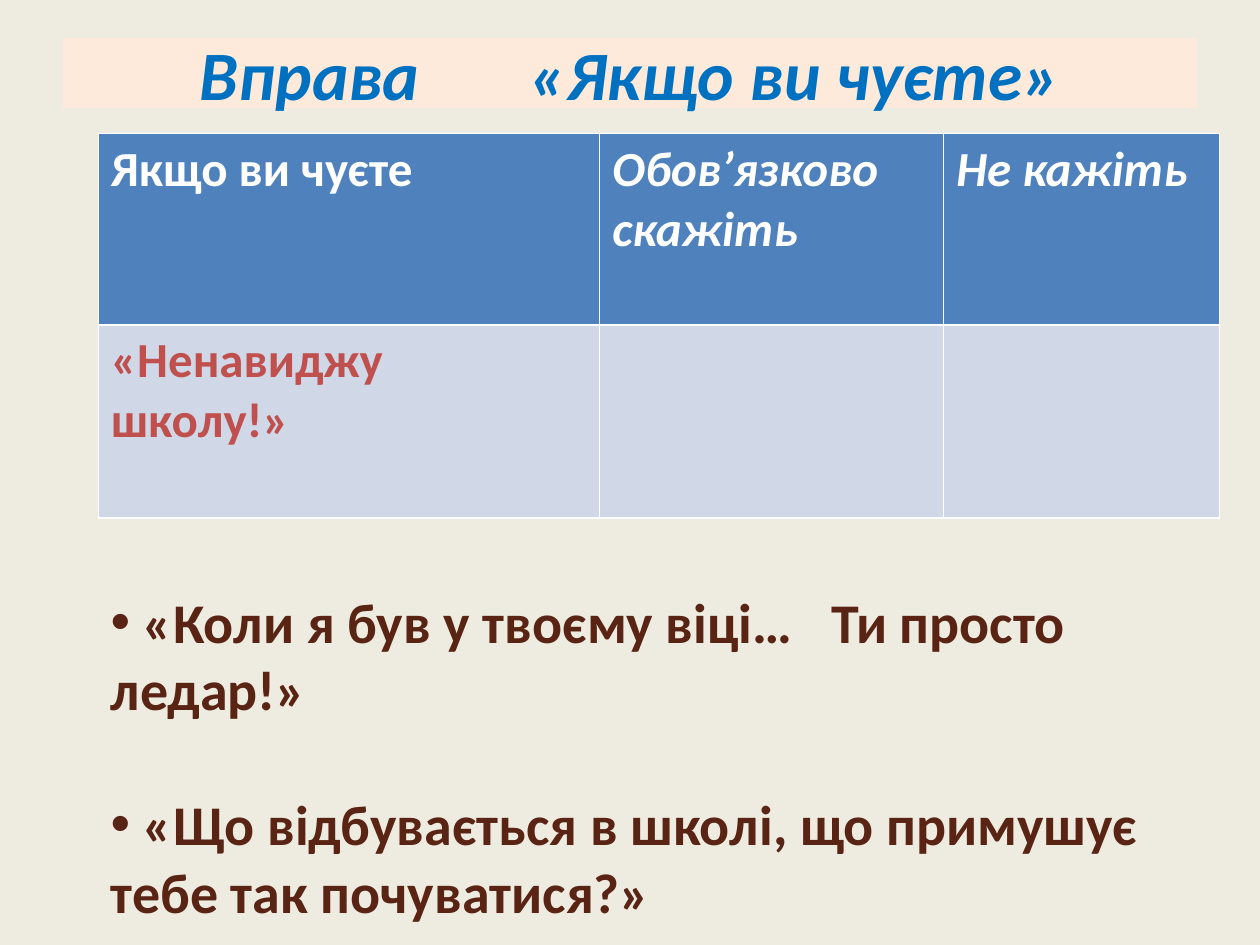
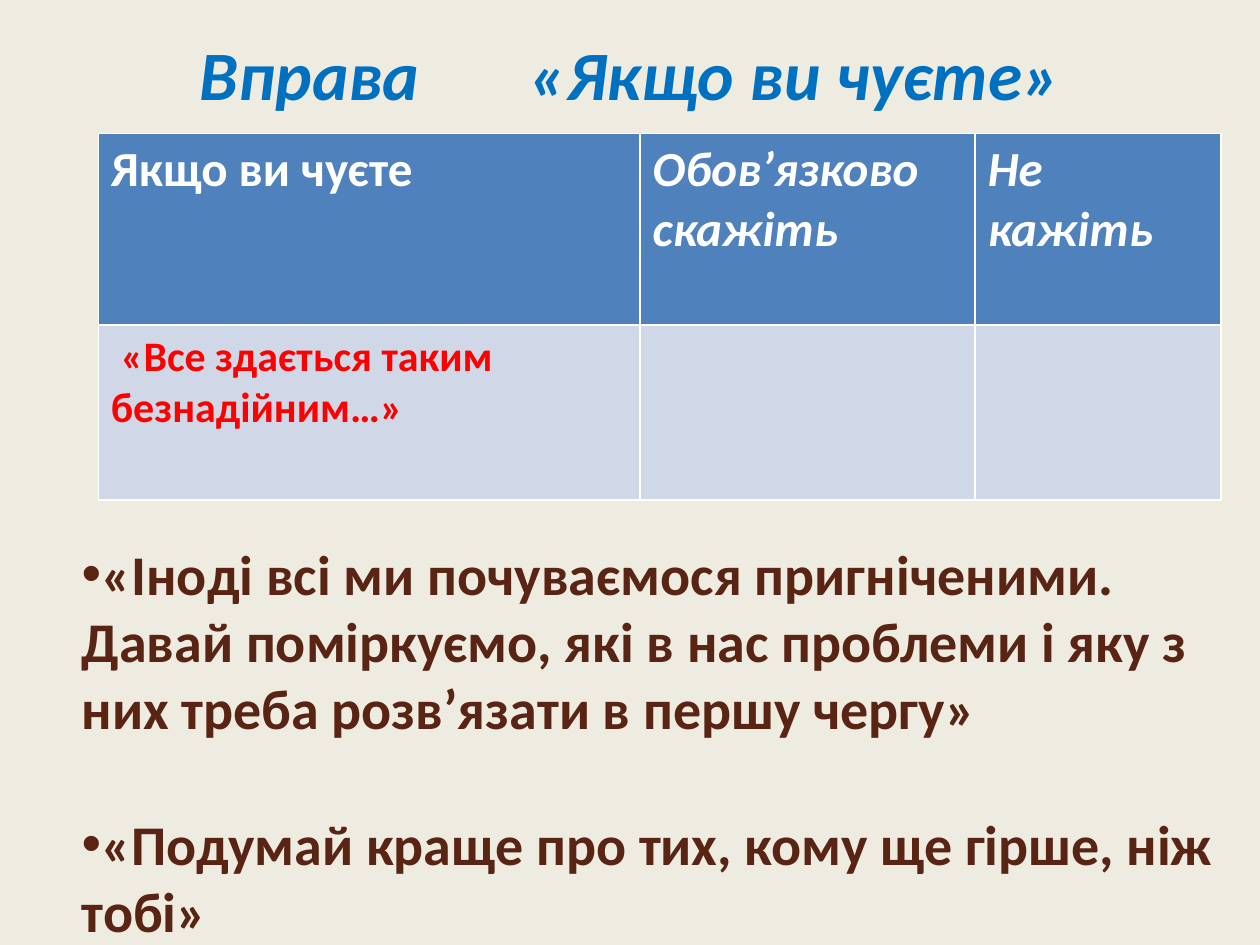
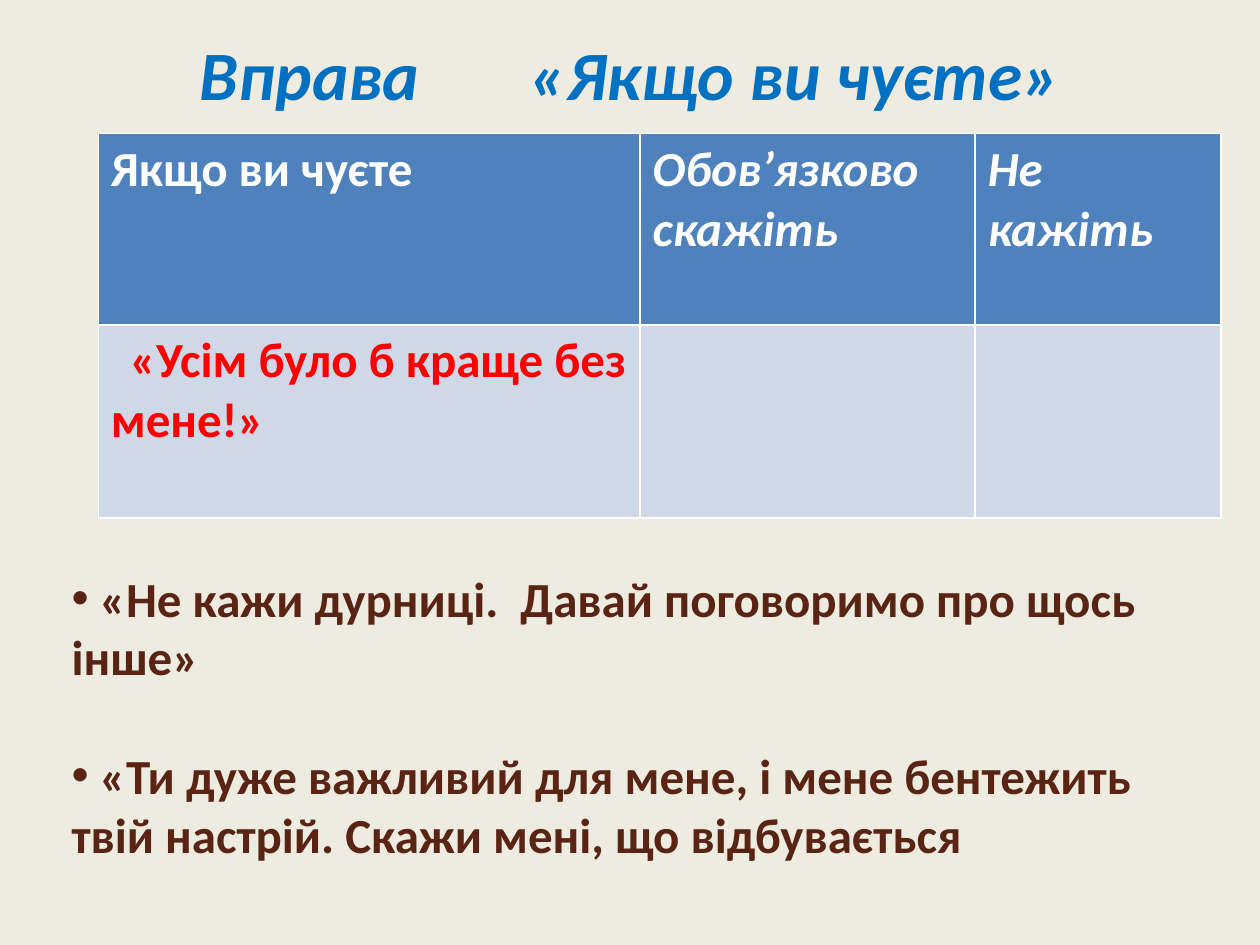
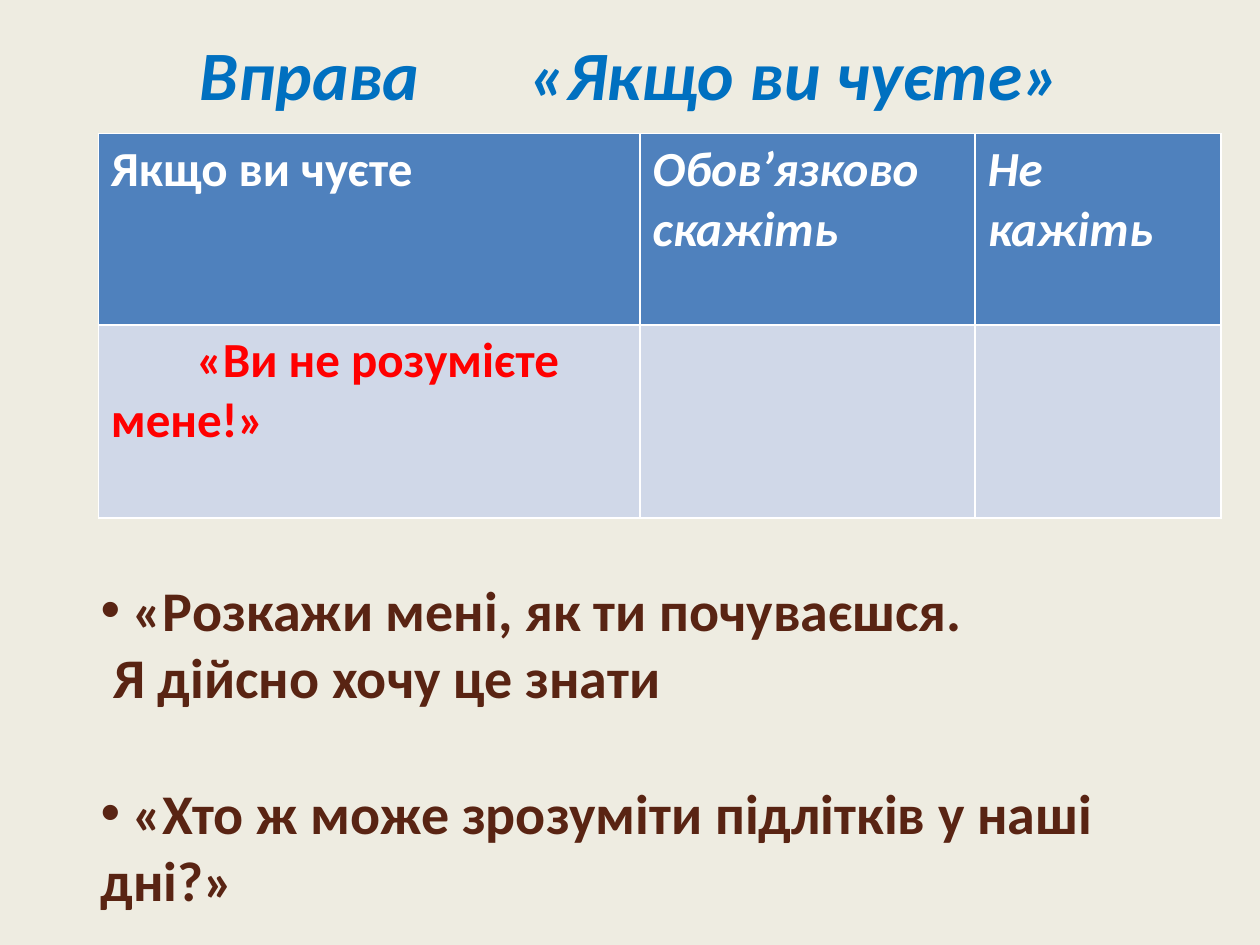
from dataclasses import dataclass

from lxml.etree import SubElement
from pptx import Presentation
from pptx.dml.color import RGBColor
from pptx.enum.text import MSO_ANCHOR, MSO_AUTO_SIZE, PP_ALIGN
from pptx.oxml.ns import qn
from pptx.util import Inches, Pt

COLORS = {
    "page": "EEECE1", "band": "FDEADA", "title": "0070C0",
    "head": "4F81BD", "body": "D0D8E8", "white": "FFFFFF",
    "rose": "C0504D", "red": "FF0000", "brown": "592413",
}
FONT = "Calibri"
LINE = 1.22  # line height of the font, in text sizes
TITLE = "Вправа|«Якщо ви чуєте»"
HEADS = ("Якщо ви чуєте", "Обов’язково скажіть", "Не кажіть")
WIDE = (3.98, 2.73, 2.19)
EVEN = (4.3, 2.66, 1.95)
HEAD_H = 1.52


@dataclass
class Look:
    size: float
    color: str
    italic: bool = False


@dataclass
class Quote:
    """The phrase in the first cell of the table."""
    text: str
    color: str = "red"
    size: float = 28
    indent: float = 0
    right: float = 0.1


@dataclass
class Reply:
    """One paragraph below the table; "|" marks a wide gap."""
    text: str
    gap: float = 0
    bullet: bool = True
    indent: float = 0


@dataclass
class Page:
    cols: tuple[float, ...]
    row: float
    quote: Quote
    box: tuple[float, float, float, float]
    replies: tuple[Reply, ...]
    size: float = 32
    anchor: MSO_ANCHOR = MSO_ANCHOR.MIDDLE
    band: bool = False


PAGES = (
    Page(WIDE, 1.53, Quote("«Ненавиджу школу!»", "rose", right=0.4),
         (0.78, 4.61, 8.67, 2.79),
         (Reply(" «Коли я був у твоєму віці…|Ти просто ледар!»", 14.5),
          Reply(" «Що відбувається в школі, що примушує тебе так почуватися?»")),
         anchor=MSO_ANCHOR.TOP, band=True),
    Page(EVEN, 1.39, Quote("«Все здається таким безнадійним…»", size=24, indent=0.08),
         (0.55, 4.22, 9.22, 3.33),
         (Reply("«Іноді всі ми почуваємося пригніченими. Давай поміркуємо, "
                "які в нас проблеми і яку з них треба розв’язати в першу чергу»"),
          Reply("«Подумай краще про тих, кому ще гірше, ніж тобі»"))),
    Page(EVEN, 1.53, Quote("«Усім було б краще без мене!»", indent=0.15),
         (0.47, 4.45, 8.75, 2.46),
         (Reply(" «Не кажи дурниці.|Давай поговоримо про щось інше»", 6.3),
          Reply(" «Ти дуже важливий для мене, і мене бентежить твій настрій. "
                "Скажи мені, що відбувається")),
         size=28),
    Page(EVEN, 1.53, Quote("«Ви не розумієте мене!»", indent=0.68),
         (0.7, 4.51, 8.83, 2.79),
         (Reply(" «Розкажи мені, як ти почуваєшся."),
          Reply("Я дійсно хочу це знати", bullet=False, indent=0.1),
          Reply(" «Хто ж може зрозуміти підлітків у наші дні?»"))),
)


def rgb(name: str) -> RGBColor:
    return RGBColor.from_string(COLORS[name])


def paint(item, name: str) -> None:
    item.fill.solid()
    item.fill.fore_color.rgb = rgb(name)


def add_run(par, text: str, look: Look):
    run = par.add_run()
    run.text = text
    font = run.font
    font.name, font.size = FONT, Pt(look.size)
    font.bold, font.italic = True, look.italic
    font.color.rgb = rgb(look.color)
    return run


def write(par, text: str, look: Look, gap: float = 0) -> None:
    """Write the parts of a text, with one widened space at each "|"."""
    for i, part in enumerate(text.split("|")):
        if i:
            space = add_run(par, " ", look)
            space._r.get_or_add_rPr().set("spc", str(round(gap * 100)))
        add_run(par, part, look)


def indent(par, first: float) -> None:
    props = par._p.get_or_add_pPr()
    props.set("marL", "0")
    props.set("indent", str(Inches(first)))


def add_box(slide, box: tuple[float, ...], anchor: MSO_ANCHOR):
    shape = slide.shapes.add_textbox(*map(Inches, box))
    shape.text_frame.word_wrap = True
    shape.text_frame.vertical_anchor = anchor
    return shape


def add_title(slide, band: bool) -> None:
    shape = add_box(slide, (0.5, 0.3, 9, 0.56), MSO_ANCHOR.MIDDLE)
    if band:
        paint(shape, "band")
    par = shape.text_frame.paragraphs[0]
    par.alignment = PP_ALIGN.CENTER
    write(par, TITLE, Look(39.6, "title", True), 54)


def add_grid(slide, page: Page) -> None:
    rows = (HEAD_H, page.row)
    frame = slide.shapes.add_table(
        2, 3, Inches(0.78), Inches(1.06), Inches(sum(page.cols)), Inches(sum(rows)))
    table = frame.table
    for row, height in zip(table.rows, rows):
        row.height = Inches(height)
    for i, (width, head) in enumerate(zip(page.cols, HEADS)):
        table.columns[i].width = Inches(width)
        top = table.cell(0, i)
        paint(top, "head")
        paint(table.cell(1, i), "body")
        write(top.text_frame.paragraphs[0], head, Look(28, "white", i > 0))
    # phrase that is heard
    quote, cell = page.quote, table.cell(1, 0)
    cell.margin_right = Inches(quote.right)
    par = cell.text_frame.paragraphs[0]
    indent(par, quote.indent)
    write(par, quote.text, Look(quote.size, quote.color))


def add_list(slide, page: Page) -> None:
    frame = add_box(slide, page.box, page.anchor).text_frame
    frame.auto_size = MSO_AUTO_SIZE.SHAPE_TO_FIT_TEXT
    for i, reply in enumerate(page.replies):
        par = frame.add_paragraph() if i else frame.paragraphs[0]
        indent(par, reply.indent)
        if reply.bullet:
            if i:
                par.space_before = Pt(page.size * LINE)
            props = par._p.get_or_add_pPr()
            SubElement(props, qn("a:buFont")).set("typeface", "Arial")
            SubElement(props, qn("a:buChar")).set("char", "•")
        write(par, reply.text, Look(page.size, "brown"), reply.gap)


def main() -> None:
    prs = Presentation()
    prs.slide_width, prs.slide_height = Inches(10), Inches(7.5)
    for page in PAGES:
        slide = prs.slides.add_slide(prs.slide_layouts[6])
        paint(slide.background, "page")
        add_title(slide, page.band)
        add_grid(slide, page)
        add_list(slide, page)
    prs.save("out.pptx")


if __name__ == "__main__":
    main()
